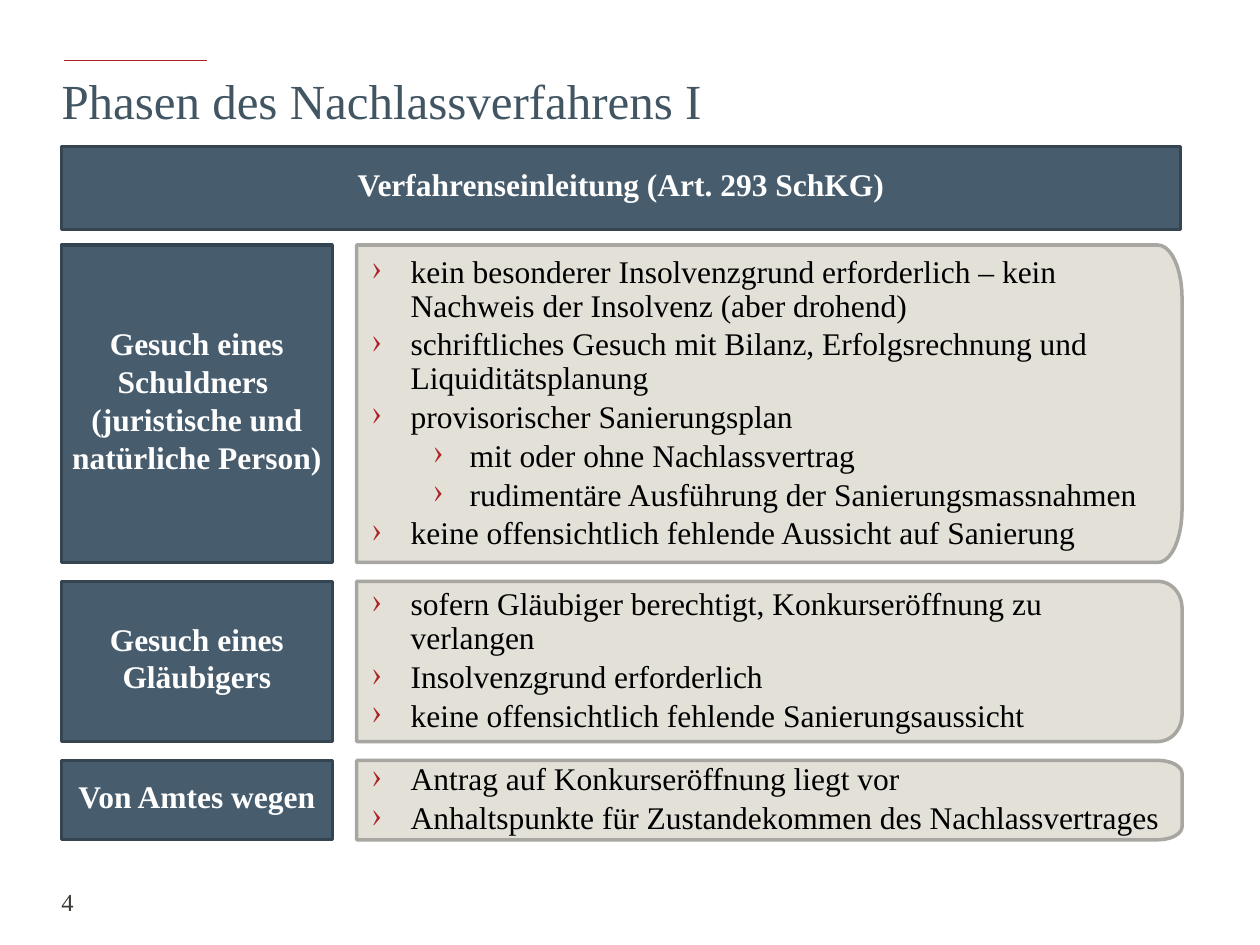
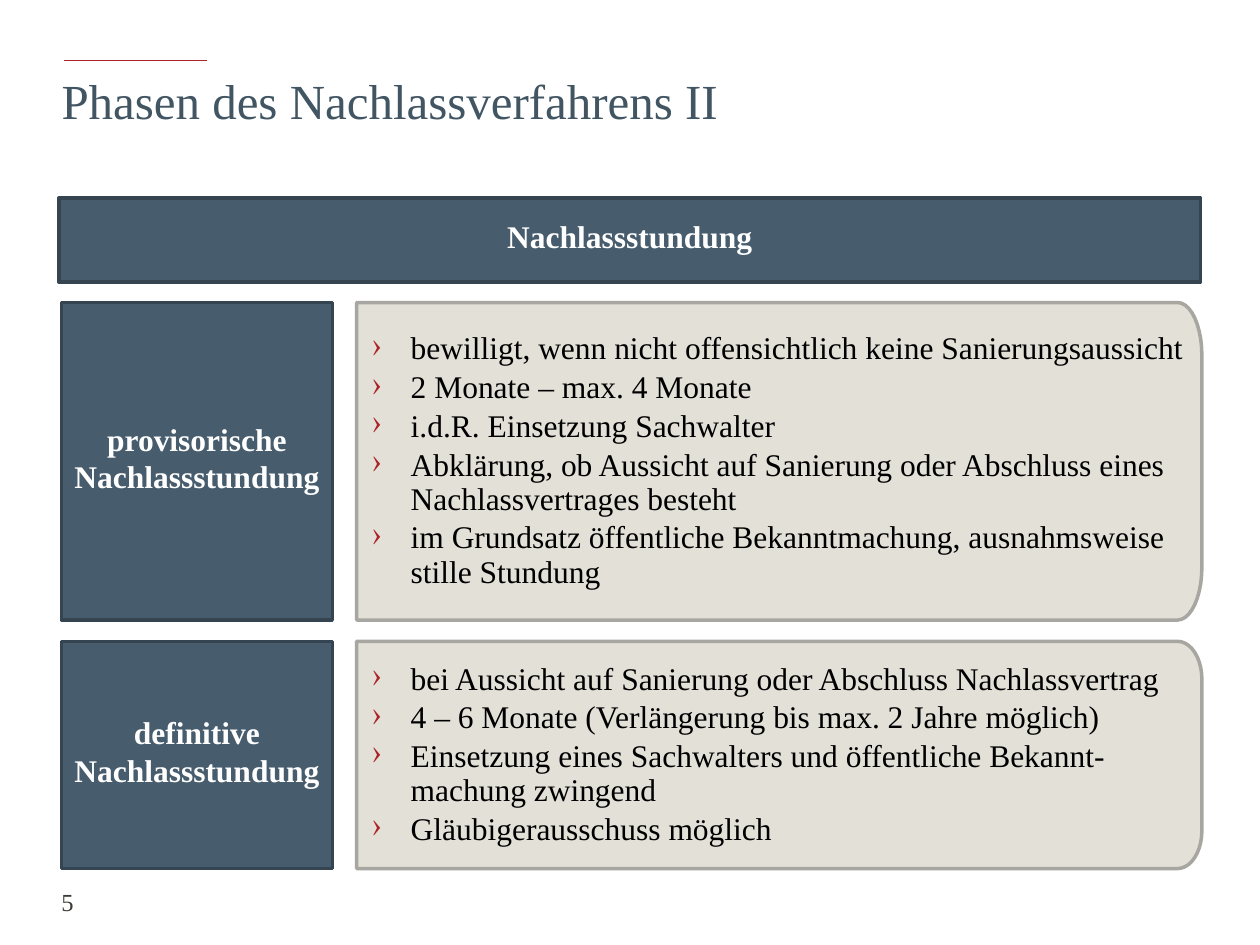
import math

from lxml import etree
from pptx import Presentation
from pptx.dml.color import RGBColor
from pptx.enum import shapes, text
from pptx.oxml import ns
from pptx.util import Cm, Pt

FONT = "Times New Roman"
COLORS = {
    "accent": "AB2328",
    "title": "425563",
    "number": "3D3935",
    "box": "475C6D",
    "box_line": "354451",
    "panel": "E3E0D8",
    "panel_line": "A8A6A0",
    "white": "FFFFFF",
    "black": "000000",
}

# Shared column grid, in cm
LEFT, LABEL_WIDTH = 1.24, 5.46
PANEL_LEFT = 7.19
CORNER_WIDTH = 0.49
CORNER_STEPS = 10

# Left indent and hanging indent by list level, in cm
INDENTS = [(0.79, 0.79), (1.98, 0.74)]


def color(name):
    return RGBColor.from_string(COLORS[name])


def format_font(paragraph, size, color_name, bold=False):
    for run in paragraph.runs:
        run.font.name = FONT
        run.font.size = Pt(size)
        run.font.bold = bold
        run.font.color.rgb = color(color_name)


def set_frame(frame, anchor, left, top, right, bottom):
    frame.word_wrap = True
    frame.auto_size = text.MSO_AUTO_SIZE.NONE
    frame.vertical_anchor = anchor
    frame.margin_left, frame.margin_top = Cm(left), Cm(top)
    frame.margin_right, frame.margin_bottom = Cm(right), Cm(bottom)


def paint(shape, fill, line):
    shape.shadow.inherit = False
    shape.fill.solid()
    shape.fill.fore_color.rgb = color(fill)
    shape.line.color.rgb = color(line)
    shape.line.width = Pt(2)


def set_bullet(paragraph, level):
    indent, hanging = INDENTS[level]
    properties = paragraph._p.get_or_add_pPr()
    properties.set("marL", str(Cm(indent)))
    properties.set("indent", str(-Cm(hanging)))
    bullet_color = etree.SubElement(properties, ns.qn("a:buClr"))
    etree.SubElement(bullet_color, ns.qn("a:srgbClr"), val=COLORS["accent"])
    etree.SubElement(properties, ns.qn("a:buChar"), char="›")


def add_accent_line(slide):
    line = slide.shapes.add_connector(
        shapes.MSO_CONNECTOR.STRAIGHT, Cm(4.17), Cm(1.22), Cm(1.3), Cm(1.22))
    line.line.color.rgb = color("accent")
    line.line.width = Pt(1)
    etree.SubElement(line._element.spPr, ns.qn("a:effectLst"))


def add_page_number(slide, number):
    shape = slide.shapes.add_textbox(Cm(LEFT), Cm(17.91), Cm(5.92), Cm(0.53))
    frame = shape.text_frame
    set_frame(frame, text.MSO_ANCHOR.MIDDLE, 0, 0, 0.25, 0)
    frame.text = str(number)
    format_font(frame.paragraphs[0], 14, "number")


def add_titled_slide(presentation, title, number):
    slide = presentation.slides.add_slide(presentation.slide_layouts[5])
    add_accent_line(slide)
    add_page_number(slide, number)
    shape = slide.shapes.title
    shape.left, shape.top = Cm(0.99), Cm(1.5)
    shape.width, shape.height = Cm(23.22), Cm(1.6)
    frame = shape.text_frame
    set_frame(frame, text.MSO_ANCHOR.TOP, 0.25, 0.13, 0.25, 0.13)
    frame.text = title
    paragraph = frame.paragraphs[0]
    paragraph.alignment = text.PP_ALIGN.LEFT
    paragraph.line_spacing = Pt(27.7)
    format_font(paragraph, 28, "title")
    return slide


def add_box(slide, label, left, top, width, height):
    """Dark rectangle with a bold centred label."""
    shape = slide.shapes.add_shape(
        shapes.MSO_SHAPE.RECTANGLE, Cm(left), Cm(top), Cm(width), Cm(height))
    paint(shape, "box", "box_line")
    frame = shape.text_frame
    set_frame(frame, text.MSO_ANCHOR.MIDDLE, 0.2, 0.25, 0.2, 0.41)
    frame.text = label
    paragraph = frame.paragraphs[0]
    paragraph.alignment = text.PP_ALIGN.CENTER
    paragraph.line_spacing = Pt(21.6)
    format_font(paragraph, 18, "white", bold=True)


def add_panel(slide, items, top, width, height):
    """Light panel, rounded on the right, with a list of (level, text)."""
    right, bottom = PANEL_LEFT + width, top + height
    corner_height = height / 6
    angles = [math.pi / 2 * step / CORNER_STEPS for step in range(CORNER_STEPS + 1)]
    curve = [(right - CORNER_WIDTH * (1 - math.sin(angle)),
              corner_height * (1 - math.cos(angle))) for angle in angles]
    outline = [(x, top + drop) for x, drop in curve]
    outline += [(x, bottom - drop) for x, drop in reversed(curve)]
    outline.append((PANEL_LEFT, bottom))
    builder = slide.shapes.build_freeform(Cm(PANEL_LEFT), Cm(top))
    builder.add_line_segments([(Cm(x), Cm(y)) for x, y in outline], close=True)
    shape = builder.convert_to_shape()
    paint(shape, "panel", "panel_line")

    frame = shape.text_frame
    set_frame(frame, text.MSO_ANCHOR.MIDDLE, 0.3, 0.15, 0.28, 0.15)
    for index, (level, item) in enumerate(items):
        paragraph = frame.add_paragraph() if index else frame.paragraphs[0]
        paragraph.text = item
        set_bullet(paragraph, level)
        paragraph.level = level
        paragraph.alignment = text.PP_ALIGN.LEFT
        paragraph.line_spacing = 0.9
        paragraph.space_after = Pt(2.7)
        format_font(paragraph, 18, "black")


def add_rows(slide, rows, top, panel_width, gap):
    """Stack rows of a label box and its panel."""
    for label, height, items in rows:
        add_box(slide, label, LEFT, top, LABEL_WIDTH, height)
        add_panel(slide, items, top, panel_width, height)
        top += height + gap


INITIATION_ROWS = [
    ("Gesuch eines Schuldners \v(juristische und natürliche Person)", 6.4, [
        (0, "kein besonderer Insolvenzgrund erforderlich – kein Nachweis der "
            "Insolvenz (aber drohend)"),
        (0, "schriftliches Gesuch mit Bilanz, Erfolgsrechnung und Liquiditätsplanung"),
        (0, "provisorischer Sanierungsplan"),
        (1, "mit oder ohne Nachlassvertrag"),
        (1, "rudimentäre Ausführung der Sanierungsmassnahmen"),
        (0, "keine offensichtlich fehlende Aussicht auf Sanierung"),
    ]),
    ("Gesuch eines Gläubigers", 3.23, [
        (0, "sofern Gläubiger berechtigt, Konkurseröffnung zu verlangen"),
        (0, "Insolvenzgrund erforderlich"),
        (0, "keine offensichtlich fehlende Sanierungsaussicht"),
    ]),
    ("Von Amtes wegen", 1.6, [
        (0, "Antrag auf Konkurseröffnung liegt vor"),
        (0, "Anhaltspunkte für Zustandekommen des Nachlassvertrages"),
    ]),
]

MORATORIUM_ROWS = [
    ("provisorische Nachlassstundung", 6.4, [
        (0, "bewilligt, wenn nicht offensichtlich keine Sanierungsaussicht"),
        (0, "2 Monate – max. 4 Monate"),
        (0, "i.d.R. Einsetzung Sachwalter"),
        (0, "Abklärung, ob Aussicht auf Sanierung oder Abschluss eines "
            "Nachlassvertrages besteht"),
        (0, "im Grundsatz öffentliche Bekanntmachung, ausnahmsweise stille Stundung"),
    ]),
    ("definitive Nachlassstundung", 4.58, [
        (0, "bei Aussicht auf Sanierung oder Abschluss Nachlassvertrag"),
        (0, "4 – 6 Monate (Verlängerung bis max. 2 Jahre möglich)"),
        (0, "Einsetzung eines Sachwalters und öffentliche Bekannt-machung zwingend"),
        (0, "Gläubigerausschuss möglich"),
    ]),
]


def main():
    presentation = Presentation()
    presentation.slide_width, presentation.slide_height = Cm(25.4), Cm(19.05)

    # Initiation of the proceedings
    slide = add_titled_slide(presentation, "Phasen des Nachlassverfahrens I", 4)
    add_box(slide, "Verfahrenseinleitung (Art. 293 SchKG)", LEFT, 2.95, 22.56, 1.68)
    add_rows(slide, INITIATION_ROWS, top=4.94, panel_width=16.64, gap=0.38)

    # Moratorium
    slide = add_titled_slide(presentation, "Phasen des Nachlassverfahrens II", 5)
    add_box(slide, "Nachlassstundung", 1.19, 3.99, 23.01, 1.7)
    add_rows(slide, MORATORIUM_ROWS, top=6.1, panel_width=17.04, gap=0.43)

    presentation.save("out.pptx")


if __name__ == "__main__":
    main()
